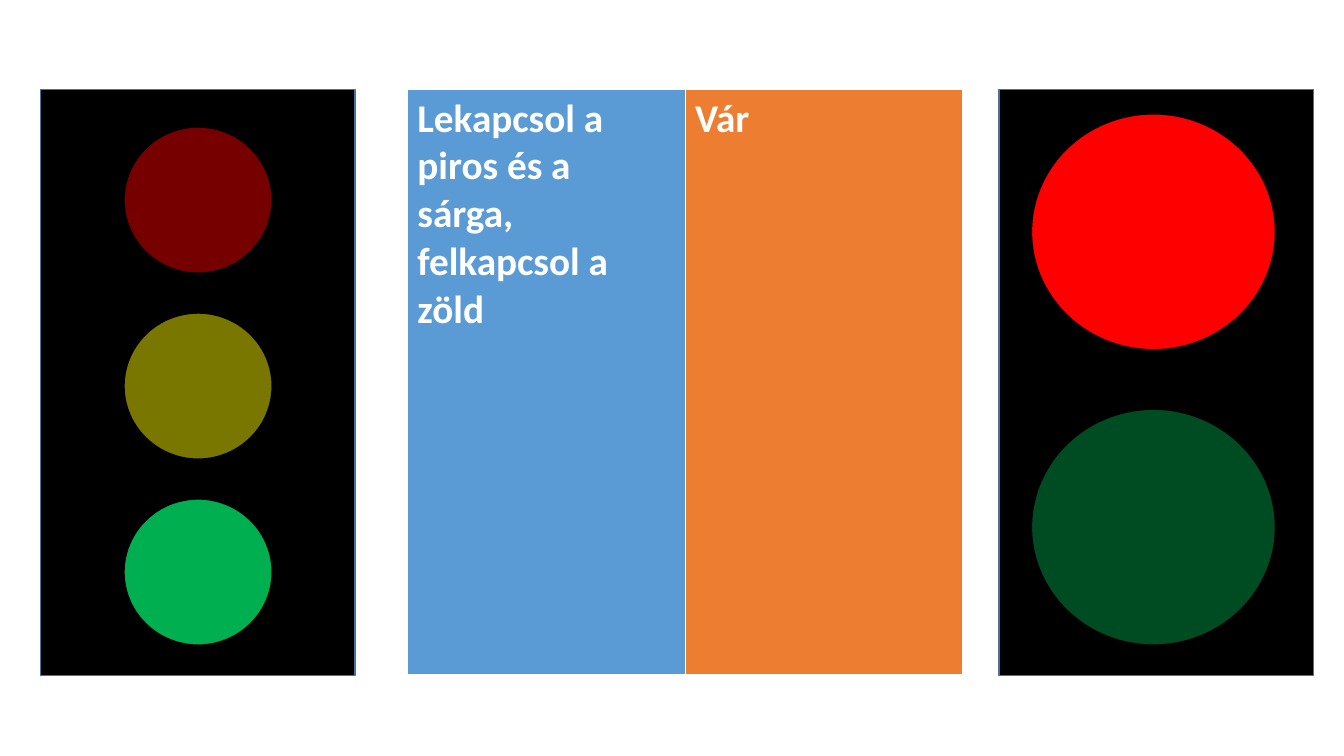
from lxml.etree import SubElement as Sub
from pptx import Presentation
from pptx.dml.color import RGBColor as RGB
from pptx.enum.shapes import MSO_SHAPE as Shape
from pptx.oxml.ns import qn
from pptx.util import Inches, Pt

BLACK, WHITE = RGB(0, 0, 0), RGB(255, 255, 255)
EDGE = RGB(0x43, 0x73, 0x9E)
RED_ON, RED_OFF = RGB(0xFF, 0, 0), RGB(0x76, 0, 0)
YELLOW_OFF = RGB(0x7A, 0x77, 0)
GREEN_ON, GREEN_OFF = RGB(0, 0xB0, 0x50), RGB(0, 0x4C, 0x22)
BLUE, ORANGE = RGB(0x5B, 0x9B, 0xD5), RGB(0xED, 0x7D, 0x31)

# Shared row and width of the three columns
TOP, HIGH = 0.89, 5.81
LIGHT_W, TABLE_W = 3.12, 5.51


def draw(group, kind, box, fill, line):
    shape = group.shapes.add_shape(kind, *map(Inches, box))
    shape.shadow.inherit = False
    shape.fill.solid()
    shape.fill.fore_color.rgb = fill
    shape.line.color.rgb = line
    shape.line.width = Pt(1)


def add_light(slide, box, lamps, size, first, step):
    """Stack lamps in a black case; first is the offset of the top lamp."""
    left, top = box[:2]
    group = slide.shapes.add_group_shape()
    draw(group, Shape.RECTANGLE, box, BLACK, EDGE)
    for i, color in enumerate(lamps):
        spot = (left + first[0], top + first[1] + i * step, *size)
        draw(group, Shape.OVAL, spot, color, BLACK)


def add_border(cell):
    props = cell._tc.get_or_add_tcPr()
    for i, (side, width) in enumerate(zip("LRTB", (1, 1, 1, 3))):
        line = Sub(props, qn(f"a:ln{side}"), w=str(Pt(width)))
        fill = Sub(line, qn("a:solidFill"))
        Sub(fill, qn("a:srgbClr"), val=str(WHITE))
        props.insert(i, line)  # borders come before the fill


def add_steps(slide, box, steps):
    """One row, one coloured cell per step."""
    table = slide.shapes.add_table(1, len(steps), *map(Inches, box)).table
    for cell, (text, color) in zip(table.iter_cells(), steps):
        cell.fill.solid()
        cell.fill.fore_color.rgb = color
        add_border(cell)
        cell.text_frame.text = text
        font = cell.text_frame.paragraphs[0].runs[0].font
        font.name, font.size, font.bold = "Calibri", Pt(28), True
        font.color.rgb = WHITE


def main():
    prs = Presentation()
    prs.slide_width, prs.slide_height = Inches(13.33), Inches(7.5)
    slide = prs.slides.add_slide(prs.slide_layouts[6])

    # Car light, pedestrian light
    add_light(slide, (0.4, TOP, LIGHT_W, HIGH),
              (RED_OFF, YELLOW_OFF, GREEN_ON), (1.47, 1.45), (0.83, 0.37), 1.845)
    add_light(slide, (9.91, TOP, LIGHT_W, HIGH),
              (RED_ON, GREEN_OFF), (2.42, 2.34), (0.32, 0.24), 2.93)

    # What each light does
    add_steps(slide, (4.04, TOP, TABLE_W, HIGH), (
        ("Lekapcsol a piros és a sárga, felkapcsol a zöld", BLUE),
        ("Vár", ORANGE)))
    prs.save("out.pptx")


if __name__ == "__main__":
    main()
